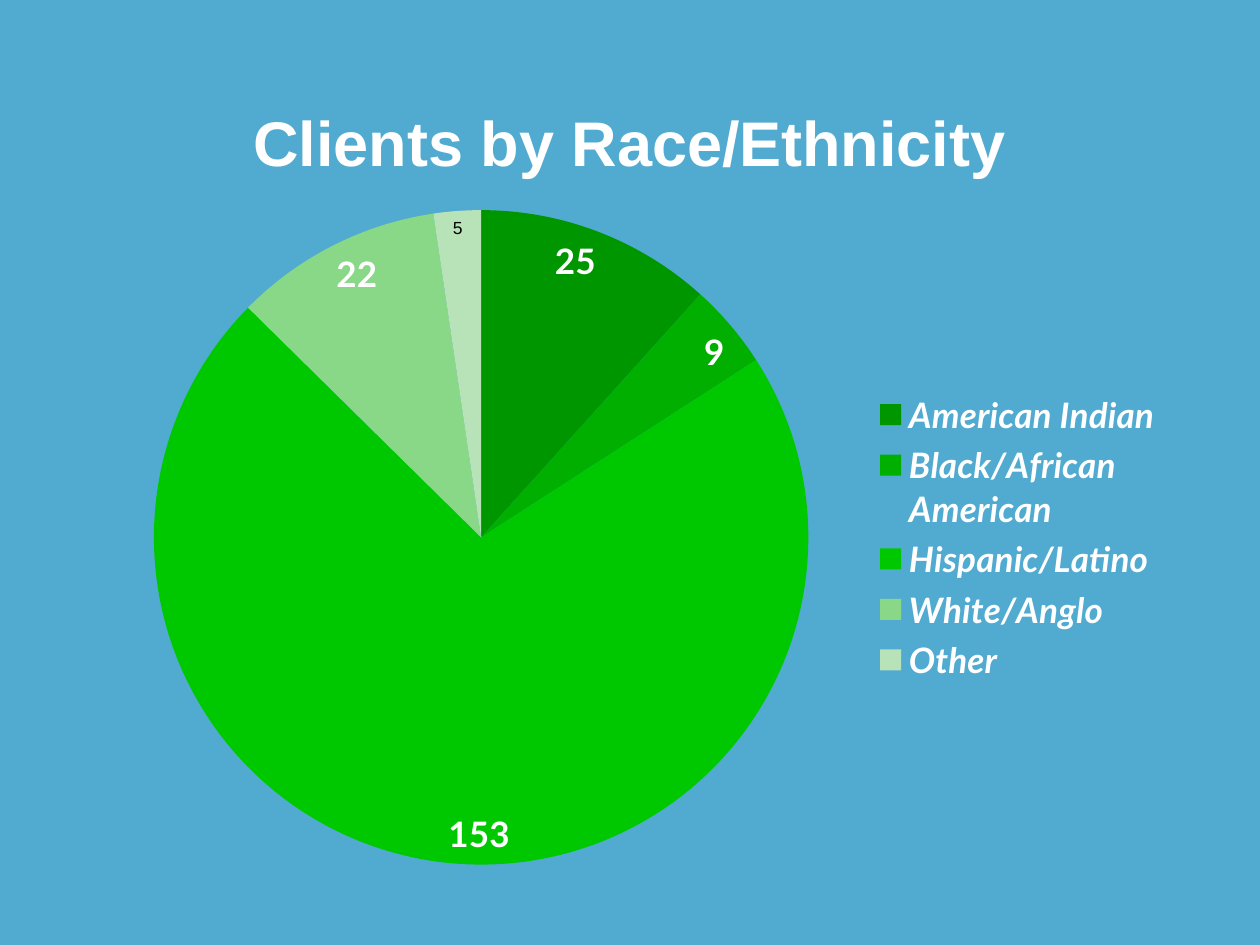
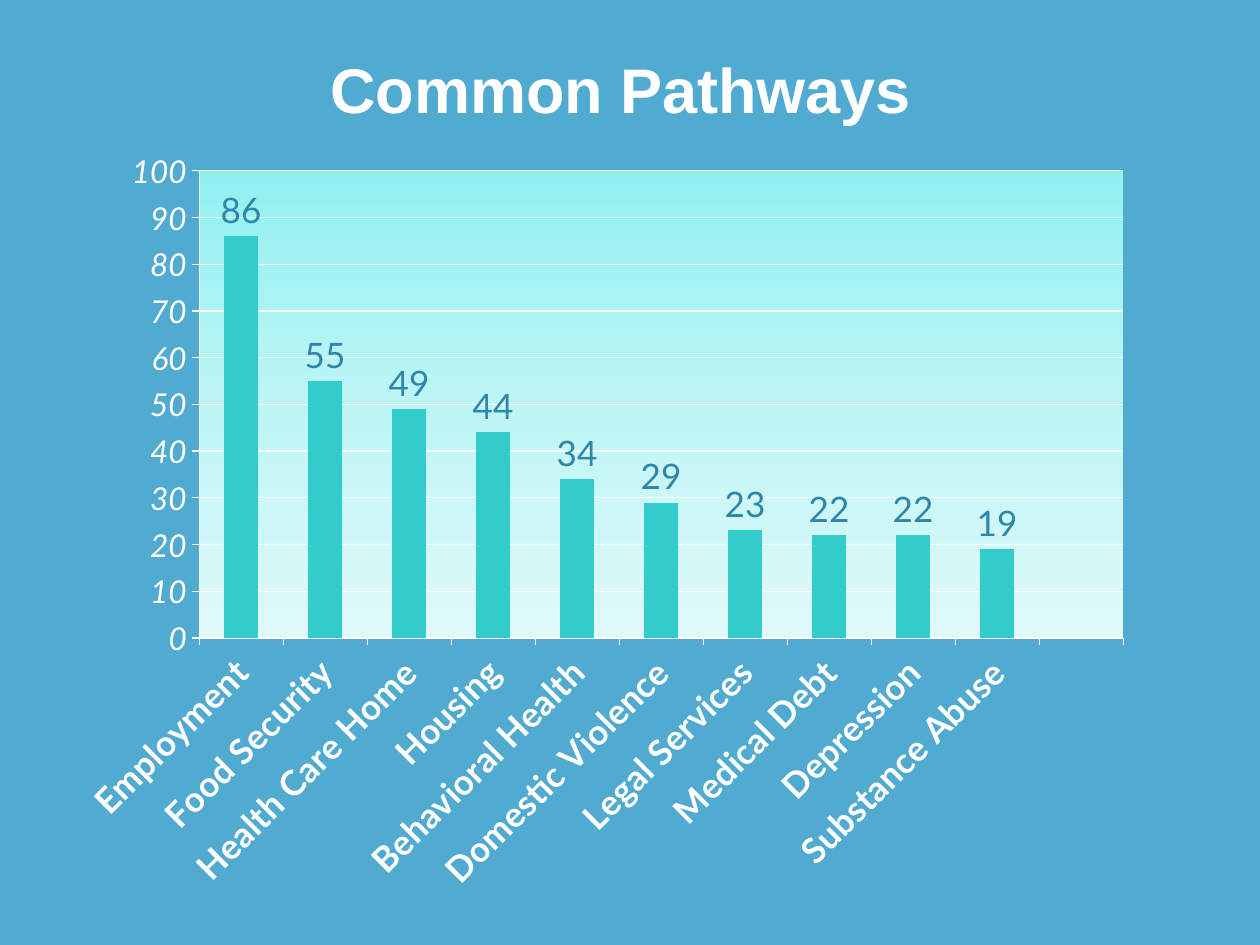
import pptx
import pptx.chart.data
import pptx.dml.color
import pptx.enum.chart
import pptx.enum.text
import pptx.oxml
import pptx.oxml.ns
import pptx.util

Cm = pptx.util.Cm
kinds = pptx.enum.chart
WHITE, SKY, TEAL, NAVY = "FFFFFF", "51ABD0", "33CCCC", "2E86AB"
GREENS = ["009600", "00AF00", "00C800", "88D888", "B8E2B8"]
FADE = {0: "91F1F1", 50: "BDF5F5", 100: "DFF9F9"}


def hue(code):
    return pptx.dml.color.RGBColor.from_string(code)


def write(item, text=None, size=20, color=WHITE, face="Lato", bold=False, italic=False):
    """Format the font of any item that has one, and set its text if given."""
    if text is not None:
        item.text = text
    font = item.font
    font.size, font.name = pptx.util.Pt(size), face
    font.bold, font.italic = bold, italic
    font.color.rgb = hue(color)


prs = pptx.Presentation()
prs.slide_width, prs.slide_height = Cm(25.4), Cm(19.05)
back = prs.slide_master.background.fill
back.solid()
back.fore_color.rgb = hue(SKY)

# Title, title box, chart kind, chart box, categories, values, plot layout in percent
pages = [
    ("Clients by Race/Ethnicity", (1.9, 1.25, 21.59, 3.18),
     kinds.XL_CHART_TYPE.PIE, (1.9, 3.89, 21.79, 13.89),
     ["American Indian", "Black/African American", "Hispanic/Latino", "White/Anglo", "Other"],
     [25, 9, 153, 22, 5], (5.5, 2.5, 60.6, 95)),
    ("Common Pathways", (1.72, 0.52, 21.59, 2.54),
     kinds.XL_CHART_TYPE.COLUMN_CLUSTERED, (1.27, 2.74, 21.79, 15.67),
     ["Employment", "Food Security", "Health Care Home", "Housing", "Behavioral Health",
      "Domestic Violence", "Legal Services", "Medical Debt", "Depression",
      "Substance Abuse", ""],
     [86, 55, 49, 44, 34, 29, 23, 22, 22, 19, None], (12.6, 4.5, 85.5, 60.1)),
]

charts, parts = [], []
for name, spot, kind, area, cats, vals, frame in pages:
    slide = prs.slides.add_slide(prs.slide_layouts[5])
    title = slide.shapes.title
    title.left, title.top, title.width, title.height = map(Cm, spot)
    title.text_frame.vertical_anchor = pptx.enum.text.MSO_ANCHOR.MIDDLE
    line = title.text_frame.paragraphs[0]
    line.alignment = pptx.enum.text.PP_ALIGN.CENTER
    write(line, name, size=36, face="Arial", bold=True)

    data = pptx.chart.data.CategoryChartData()
    data.categories = cats
    data.add_series("Series 1", vals)
    chart = slide.shapes.add_chart(kind, *map(Cm, area), data).chart
    chart.has_title = False
    chart.has_legend = False
    write(chart, size=18)
    chart.plots[0].series[0].data_labels.show_value = True
    charts.append(chart)
    parts.append((chart.plots[0]._element.getparent(), 0, frame))
pie, bars = charts

# Clients: green slices with a legend at the right
plot = pie.plots[0]
plot.vary_by_categories = True
slices = plot.series[0]
inside = kinds.XL_LABEL_POSITION.INSIDE_END
slices.data_labels.position = inside
write(slices.data_labels, bold=True)
for i, green in enumerate(GREENS):
    fill = slices.points[i].format.fill
    fill.solid()
    fill.fore_color.rgb = hue(green)
last = slices.points[len(GREENS) - 1].data_label
write(last, size=10, color="000000", face="Arial")
last.position = inside
pie.has_legend = True
pie.legend.position = kinds.XL_LEGEND_POSITION.RIGHT
pie.legend.include_in_layout = False
write(pie.legend, bold=True, italic=True)
parts.append((pie.legend._element, 1, (71.9, 28, 27, 44)))

# Pathways: columns on a shaded plot area
plot = bars.plots[0]
plot.vary_by_categories = False
plot.gap_width = 147
columns = plot.series[0]
fill = columns.format.fill
fill.solid()
fill.fore_color.rgb = hue(TEAL)
columns.data_labels.position = kinds.XL_LABEL_POSITION.OUTSIDE_END
write(columns.data_labels, color=NAVY)
scale, names = bars.value_axis, bars.category_axis
scale.minimum_scale, scale.maximum_scale, scale.major_unit = 0, 100, 10
scale.has_major_gridlines = True
write(scale.tick_labels, size=18, italic=True)
write(names.tick_labels, bold=True)
names.tick_labels._element.txPr.bodyPr.set("rot", "-2700000")
for axis in (scale, names):
    axis.major_tick_mark = kinds.XL_TICK_MARK.OUTSIDE
for rule in (scale, names, scale.major_gridlines):
    rule.format.line.color.rgb = hue(WHITE)
    rule.format.line.width = pptx.util.Pt(0.75)

space = pptx.oxml.ns.nsdecls("c", "a")
stops = "".join(f'<a:gs pos="{at * 1000}"><a:srgbClr val="{code}"/></a:gs>'
                for at, code in FADE.items())
plot._element.getparent().append(pptx.oxml.parse_xml(
    f'<c:spPr {space}><a:gradFill><a:gsLst>{stops}</a:gsLst>'
    '<a:lin ang="5400000" scaled="0"/></a:gradFill></c:spPr>'))

# Fixed places for the plot areas and the legend
for part, spot, frame in parts:
    for old in part.findall(pptx.oxml.ns.qn("c:layout")):
        part.remove(old)
    inner = '<c:layoutTarget val="inner"/>' if spot == 0 else ""
    modes = '<c:xMode val="edge"/><c:yMode val="edge"/>'
    sides = "".join(f'<c:{key} val="{val / 100:.3f}"/>' for key, val in zip("xywh", frame))
    part.insert(spot, pptx.oxml.parse_xml(
        f"<c:layout {space}><c:manualLayout>{inner}{modes}{sides}"
        "</c:manualLayout></c:layout>"))

prs.save("out.pptx")
